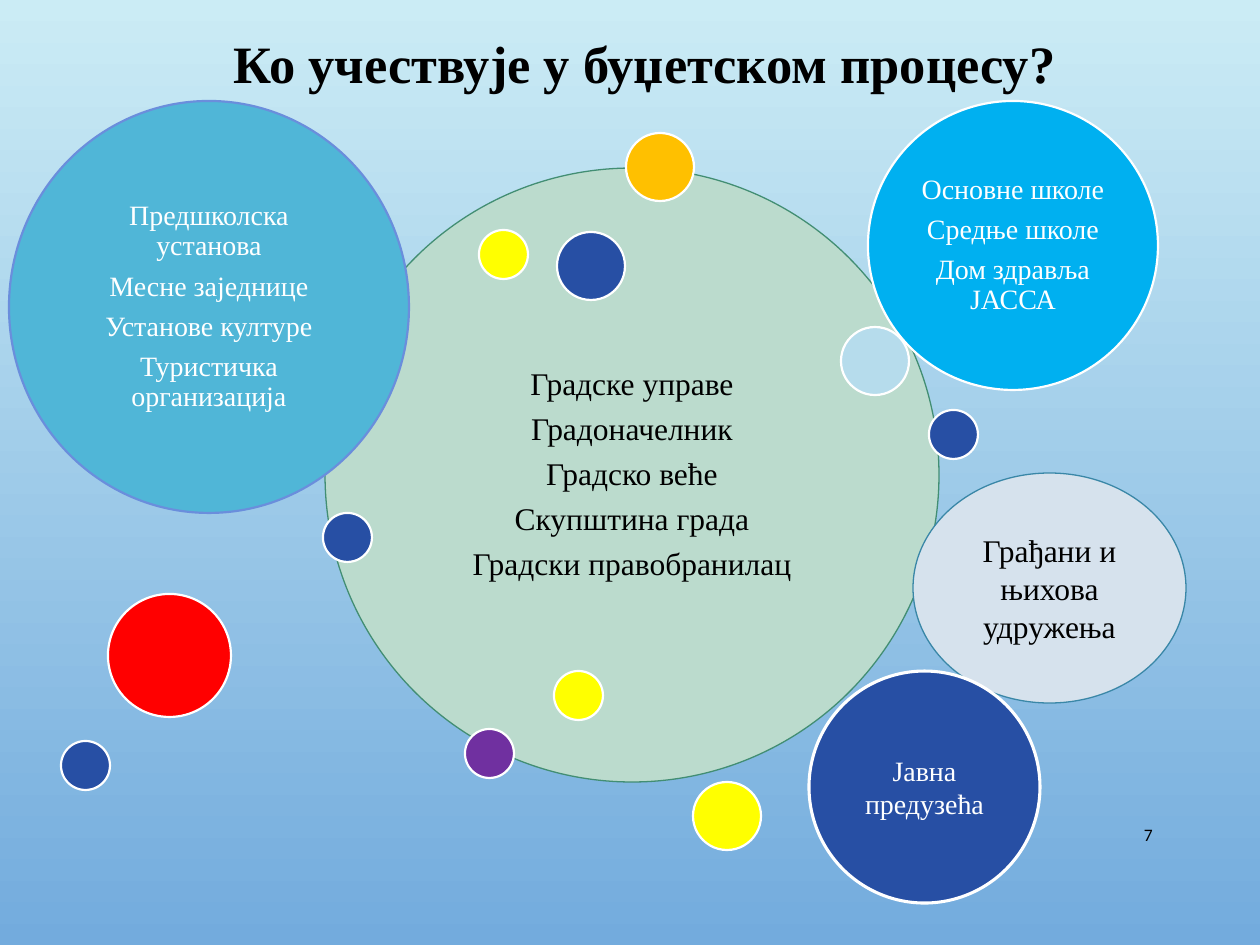
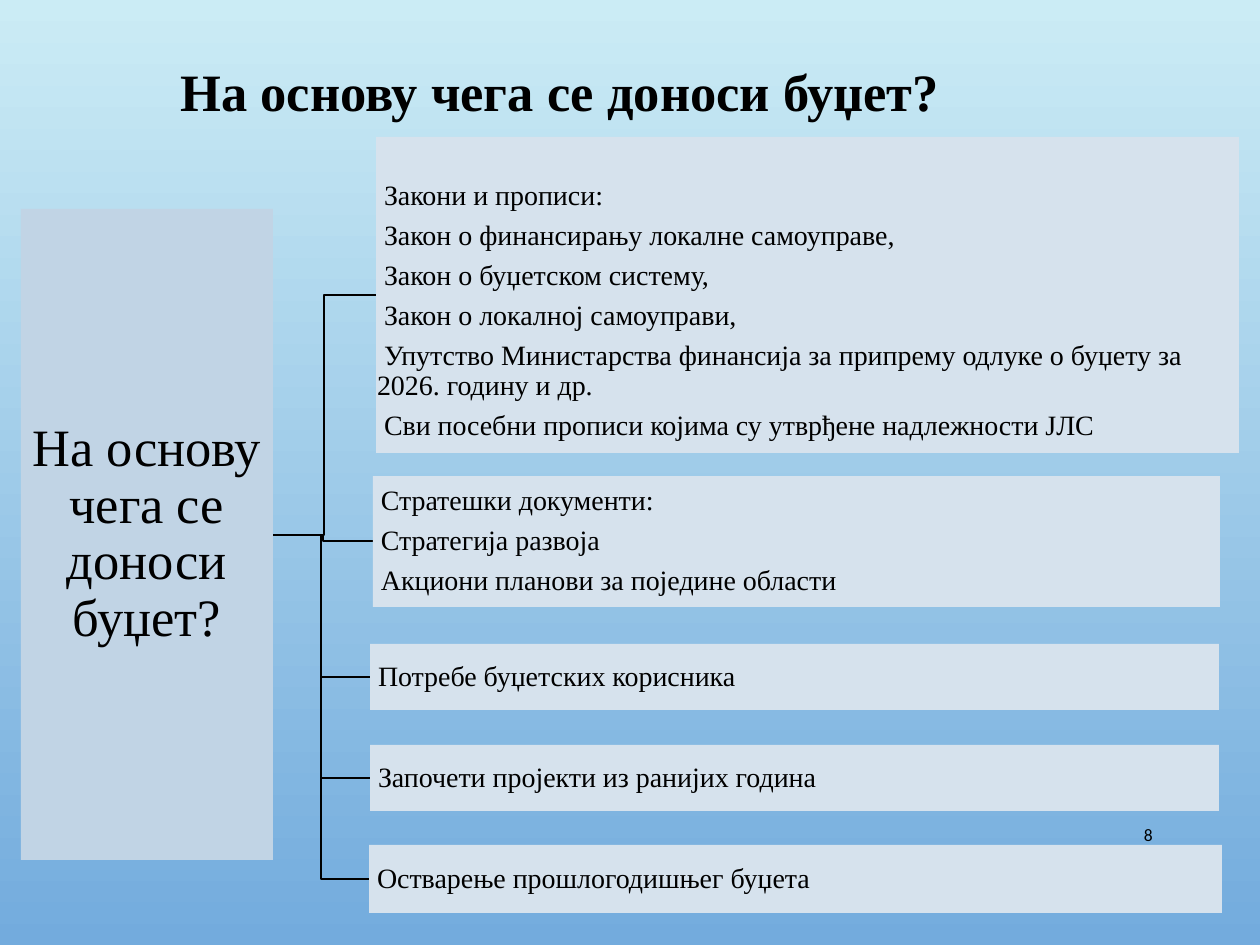
from dataclasses import dataclass

from pptx import Presentation
from pptx.dml.color import RGBColor as RGB
from pptx.enum.shapes import MSO_SHAPE as SHAPE
from pptx.enum.text import MSO_ANCHOR as ANCHOR, PP_ALIGN as ALIGN
from pptx.util import Emu, Pt

EMU_PER_PX = 914400 / 126


def px(n):
    """Turn px into EMU."""
    return Emu(round(n * EMU_PER_PX))


@dataclass(frozen=True)
class Theme:
    """Colours, fonts and type sizes of the deck."""
    sky_top: str = "CBECF5"
    sky_bottom: str = "73ABDD"
    black: str = "000000"
    white: str = "FFFFFF"
    mint: str = "BBDBCD"
    green: str = "428E73"
    teal: str = "50B6D7"
    periwinkle: str = "6A8EDC"
    cyan: str = "00B0F0"
    ice: str = "B6DCEC"
    navy: str = "274FA4"
    orange: str = "FFC000"
    purple: str = "7030A0"
    yellow: str = "FFFF00"
    red: str = "FF0000"
    pale: str = "D6E2ED"
    steel: str = "C1D4E5"
    sea: str = "3A87A7"
    serif: str = "Times New Roman"
    sans: str = "Calibri"
    title: int = 30
    large: int = 18
    body: int = 16
    number: int = 10
    tight: float = 0.9
    para_gap: float = 0.35


class Deck:
    """Holds the theme and the current slide and draws each kind of element."""

    def __init__(self, theme):
        """Start an empty deck."""
        self.t = theme
        self.prs = Presentation()
        self.prs.slide_width, self.prs.slide_height = px(1260), px(945)

    def slide(self, number):
        """Start a slide with the shared background and its number."""
        t = self.t
        self.s = self.prs.slides.add_slide(self.prs.slide_layouts[6])
        fill = self.s.background.fill
        fill.gradient()
        fill.gradient_angle = 270
        for stop, color in zip(fill.gradient_stops, (t.sky_top, t.sky_bottom)):
            stop.color.rgb = RGB.from_string(color)
        tf = self.textbox(1086, 810, 79, 50)
        tf.vertical_anchor = ANCHOR.MIDDLE
        self.set_text(tf, [str(number)], t.number, align=ALIGN.RIGHT,
                      font=t.sans)

    def textbox(self, x, y, w, h):
        """Add a wrapping text box and return its text frame."""
        tf = self.s.shapes.add_textbox(px(x), px(y), px(w), px(h)).text_frame
        tf.word_wrap = True
        return tf

    def title(self, text, x, y, w, align):
        """Add the slide title."""
        self.set_text(self.textbox(x, y, w, 77), [text], self.t.title,
                      align=align, bold=True)

    def set_text(self, tf, lines, size, color=None, align=ALIGN.CENTER,
                 font=None, bold=False, tight=False, indent=0):
        """Fill a text frame with one paragraph per line."""
        t = self.t
        tf.text = "\n".join(lines)
        for p in tf.paragraphs:
            p.alignment = align
            if tight:
                p.line_spacing = t.tight
                p.space_after = Pt(round(size * t.para_gap, 1))
            if indent:
                p._p.get_or_add_pPr().set("indent", str(px(indent)))
            for r in p.runs:
                r.font.name = font or t.serif
                r.font.size = Pt(size)
                r.font.bold = bold
                r.font.color.rgb = RGB.from_string(color or t.black)

    def shape(self, kind, x, y, w, h, fill, line=None, weight=1.25, inset=9):
        """Add a filled shape and return its text frame."""
        sp = self.s.shapes.add_shape(kind, px(x), px(y), px(w), px(h))
        sp.shadow.inherit = False
        sp.fill.solid()
        sp.fill.fore_color.rgb = RGB.from_string(fill)
        if line:
            sp.line.color.rgb = RGB.from_string(line)
            sp.line.width = Pt(weight)
        else:
            sp.line.fill.background()
        tf = sp.text_frame
        tf.word_wrap = True
        tf.vertical_anchor = ANCHOR.MIDDLE
        tf.margin_left = tf.margin_right = px(inset)
        tf.margin_top = tf.margin_bottom = px(inset)
        return tf

    def bubble(self, box, fill, line, weight, lines, size, color, tight=True):
        """Add an ellipse with centred text."""
        tf = self.shape(SHAPE.OVAL, *box, fill, line, weight)
        self.set_text(tf, lines, size, color, tight=tight)

    def dots(self, *dots):
        """Add plain white-rimmed circles."""
        for x, y, d, fill in dots:
            self.shape(SHAPE.OVAL, x, y, d, d, fill, self.t.white)

    def elbow(self, x1, y1, x2, y2):
        """Add a line that turns halfway between two points."""
        mid = (x1 + x2) // 2
        fb = self.s.shapes.build_freeform(x1, y1, scale=EMU_PER_PX)
        fb.add_line_segments([(mid, y1), (mid, y2), (x2, y2)], close=False)
        sp = fb.convert_to_shape()
        sp.shadow.inherit = False
        sp.fill.background()
        sp.line.color.rgb = RGB.from_string(self.t.black)
        sp.line.width = Pt(1.25)

    def panel(self, box, lines, top=1):
        """Add a left-aligned panel; a larger top inset hangs text from it."""
        tf = self.shape(SHAPE.RECTANGLE, *box, self.t.pale, inset=1)
        if top > 1:
            tf.vertical_anchor = ANCHOR.TOP
            tf.margin_top = px(top)
        self.set_text(tf, lines, self.t.body, align=ALIGN.LEFT, tight=True,
                      indent=7)


def participants(d):
    """Draw the slide on who takes part in the budget process."""
    t = d.t
    small, medium, big = 49, 68, 123
    d.slide(7)
    d.bubble((325, 168, 614, 614), t.mint, t.green, 0.75,
             ["Градске управе", "Градоначелник", "Градско веће",
              "Скупштина града", "Градски правобранилац"], t.large, t.black)
    d.dots((626, 133, medium, t.orange), (465, 729, small, t.purple),
           (929, 410, small, t.navy), (693, 782, medium, t.yellow),
           (479, 230, small, t.yellow), (323, 513, small, t.navy))
    d.bubble((9, 101, 400, 412), t.teal, t.periwinkle, 1.25,
             ["Предшколска установа", "Месне заједнице", "Установе културе",
              "Туристичка организација"], t.body, t.white)
    d.dots((557, 232, medium, t.navy), (108, 594, big, t.red))
    d.bubble((868, 101, 290, 289), t.cyan, t.white, 1.25,
             ["Основне школе", "Средње школе", "Дом здравља ЈАССА"],
             t.body, t.white)
    d.dots((841, 327, medium, t.ice), (61, 741, small, t.navy),
           (554, 671, small, t.yellow))
    d.bubble((913, 473, 273, 230), t.pale, t.sea, 0.75,
             ["Грађани и њихова удружења"], t.large, t.black, tight=False)
    d.bubble((809, 671, 231, 232), t.navy, t.white, 1.75,
             ["Јавна предузећа"], t.body, t.white, tight=False)
    d.title("Ко учествује у буџетском процесу?", 136, 25, 1018, ALIGN.CENTER)


def legal_basis(d):
    """Draw the slide on what the budget is based on."""
    t = d.t
    question = "На основу чега се доноси буџет?"
    panels = [
        ((376, 137, 863, 316),
         ["Закони и прописи:", "Закон о финансирању локалне самоуправе,",
          "Закон о буџетском систему,", "Закон о локалној самоуправи,",
          "Упутство Министарства финансија за припрему одлуке о буџету "
          "за 2026. годину и др.",
          "Сви посебни прописи којима су утврђене надлежности ЈЛС"], 44),
        ((373, 476, 847, 131),
         ["Стратешки документи:", "Стратегија развоја",
          "Акциони планови за поједине области"], 1),
        ((370, 644, 849, 66), ["Потребе буџетских корисника"], 1),
        ((370, 745, 849, 66), ["Започети пројекти из ранијих година"], 1),
        ((369, 845, 853, 68), ["Остварење прошлогодишњег буџета"], 1),
    ]
    d.slide(8)
    for (x, y, _, h), _, _ in reversed(panels):
        d.elbow(273, 535, x, y + h // 2)
    tf = d.shape(SHAPE.RECTANGLE, 21, 209, 252, 651, t.steel, inset=3)
    d.set_text(tf, [question], t.title, tight=True)
    for box, lines, top in panels:
        d.panel(box, lines, top)
    d.title(question, 168, 53, 850, ALIGN.LEFT)


def main():
    """Build and save the deck."""
    d = Deck(Theme())
    participants(d)
    legal_basis(d)
    d.prs.save("out.pptx")


if __name__ == "__main__":
    main()
